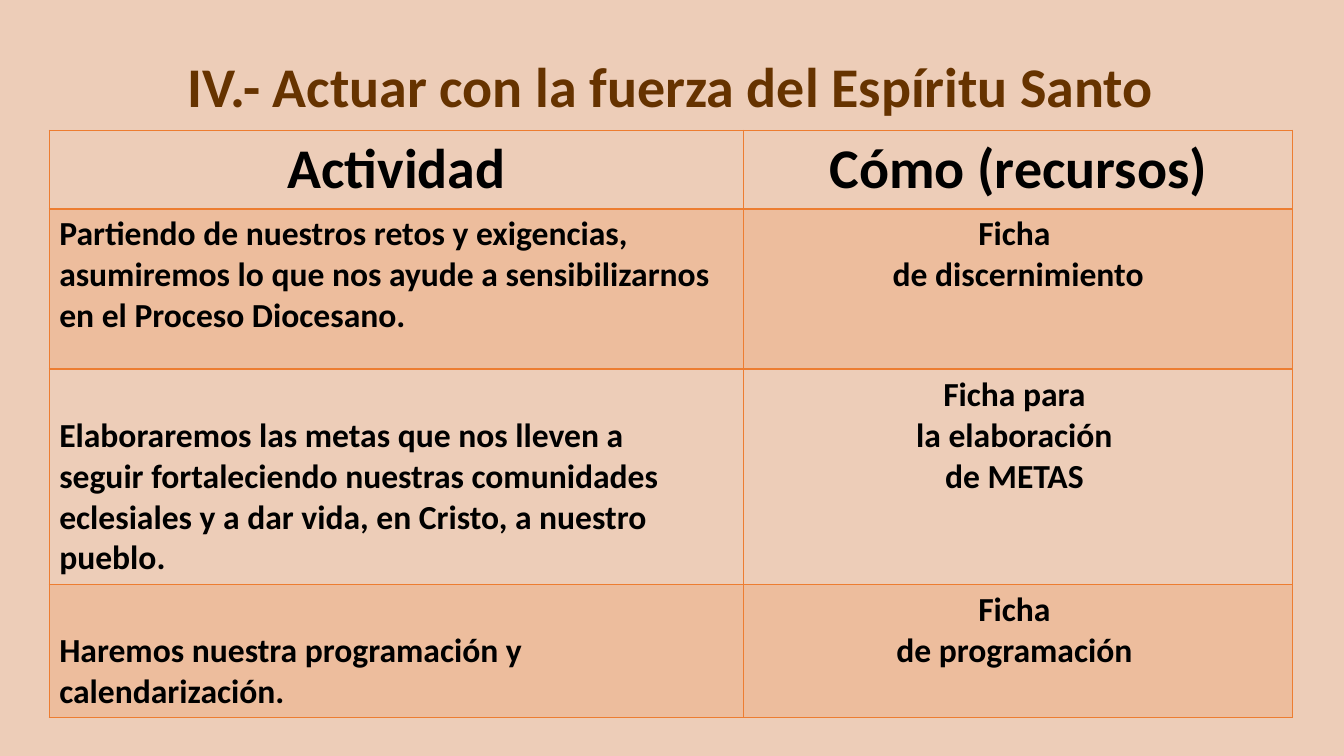
from dataclasses import dataclass

from lxml.etree import SubElement
from pptx import Presentation
from pptx.dml.color import RGBColor
from pptx.enum.text import MSO_ANCHOR, PP_ALIGN
from pptx.oxml import parse_xml
from pptx.oxml.ns import nsdecls, qn
from pptx.util import Cm, Pt

TITLE = "IV.- Actuar con la fuerza del Espíritu Santo"
HEADINGS = ["Actividad", "Cómo (recursos)"]
# Each activity: lines, resource lines, and the offset of the first column's text
ACTIVITIES = [
    (["Partiendo de nuestros retos y exigencias,",
      "asumiremos lo que nos ayude a sensibilizarnos",
      "en el Proceso Diocesano."],
     ["Ficha ", "de discernimiento"], 0),
    (["Elaboraremos las metas que nos lleven a",
      "seguir fortaleciendo nuestras comunidades",
      "eclesiales y a dar vida, en Cristo, a nuestro",
      "pueblo."],
     ["Ficha para ", "la elaboración ", "de METAS "], 1.03),
    (["Haremos nuestra programación y",
      "calendarización."],
     ["Ficha ", "de programación "], 1.03),
]
COLUMN_WIDTHS = [17.5, 13.84]
ROW_HEIGHTS = [1.98, 4.04, 5.42, 3.36]
CELL_MARGIN = 0.13


@dataclass(frozen=True)
class Theme:
    font: str = "Calibri"
    background: str = "EDCDB8"
    title: str = "663300"
    text: str = "000000"
    accent: str = "ED7D31"
    band_opacity: int = 20
    large: int = 40
    body: int = 24
    border: int = 1
    header_border: int = 2


THEME = Theme()


def style_paragraphs(frame, size, color, alignment):
    for para in frame.paragraphs:
        para.alignment = alignment
        para.font.name = THEME.font
        para.font.size = Pt(size)
        para.font.bold = True
        para.font.color.rgb = RGBColor.from_string(color)


def set_borders(cell, bottom_width):
    properties = cell._tc.get_or_add_tcPr()
    widths = {"lnL": THEME.border, "lnR": THEME.border,
              "lnT": THEME.border, "lnB": bottom_width}
    for position, (side, width) in enumerate(widths.items()):
        properties.insert(position, parse_xml(
            f'<a:{side} {nsdecls("a")} w="{Pt(width)}"><a:solidFill>'
            f'<a:srgbClr val="{THEME.accent}"/></a:solidFill></a:{side}>'))


def fill_band(cell):
    """Fill the cell with the see-through accent colour."""
    cell.fill.solid()
    cell.fill.fore_color.rgb = RGBColor.from_string(THEME.accent)
    color = cell._tc.tcPr.find(qn("a:solidFill")).find(qn("a:srgbClr"))
    SubElement(color, qn("a:alpha")).set("val", str(THEME.band_opacity * 1000))


def add_title(page):
    title = page.shapes.title
    title.left, title.top, title.width, title.height = map(Cm, (2.29, 1.14, 29.21, 2.21))
    frame = title.text_frame
    frame.text = TITLE
    frame.vertical_anchor = MSO_ANCHOR.MIDDLE
    style_paragraphs(frame, THEME.large, THEME.title, PP_ALIGN.CENTER)
    frame.paragraphs[0].line_spacing = 0.9


def add_activity_table(page):
    table = page.shapes.add_table(
        len(ROW_HEIGHTS), len(COLUMN_WIDTHS), Cm(1.24), Cm(3.28),
        Cm(sum(COLUMN_WIDTHS)), Cm(sum(ROW_HEIGHTS))).table
    table.horz_banding = False
    for column, width in zip(table.columns, COLUMN_WIDTHS):
        column.width = Cm(width)
    for row, height in zip(table.rows, ROW_HEIGHTS):
        row.height = Cm(height)

    texts = [HEADINGS] + [("\n".join(activity), "\v".join(resource))
                          for activity, resource, offset in ACTIVITIES]
    for row_number, row_texts in enumerate(texts):
        header = row_number == 0
        for column_number, text in enumerate(row_texts):
            cell = table.cell(row_number, column_number)
            cell.text = text
            cell.margin_top = cell.margin_bottom = Cm(CELL_MARGIN)
            centred = header or column_number == 1
            style_paragraphs(cell.text_frame, THEME.large if header else THEME.body,
                             THEME.text, PP_ALIGN.CENTER if centred else PP_ALIGN.LEFT)
            if row_number % 2:
                fill_band(cell)
            else:
                cell.fill.background()
            set_borders(cell, THEME.header_border if header else THEME.border)
    for row_number, (activity, resource, offset) in enumerate(ACTIVITIES, start=1):
        table.cell(row_number, 0).margin_top = Cm(CELL_MARGIN + offset)


def main():
    deck = Presentation()
    deck.slide_width, deck.slide_height = Cm(33.87), Cm(19.05)
    page = deck.slides.add_slide(deck.slide_layouts.get_by_name("Title Only"))
    page.background.fill.solid()
    page.background.fill.fore_color.rgb = RGBColor.from_string(THEME.background)
    add_title(page)
    add_activity_table(page)
    deck.save("out.pptx")


if __name__ == "__main__":
    main()
